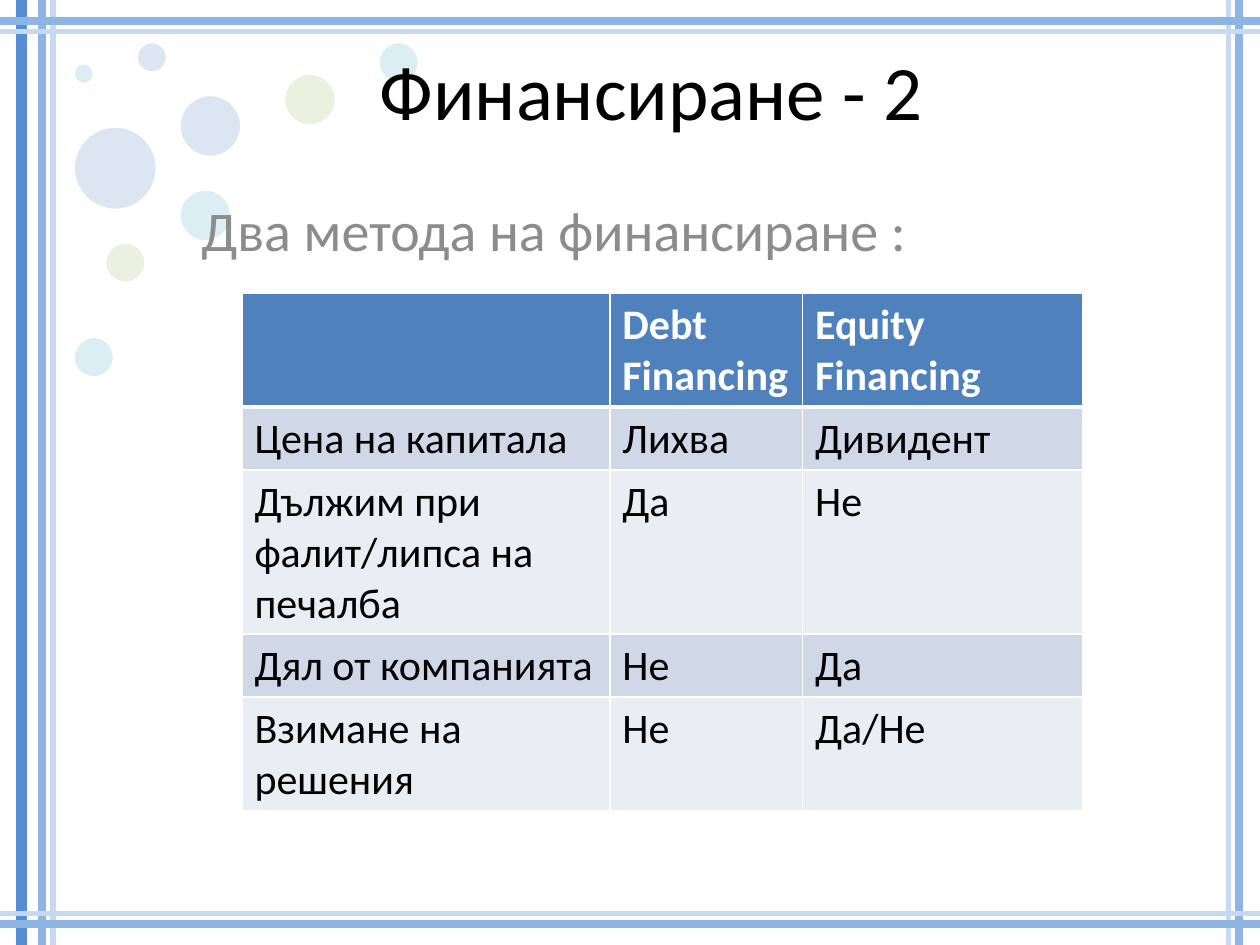
from lxml import etree
from pptx import Presentation
from pptx.dml.color import RGBColor
from pptx.enum.shapes import MSO_CONNECTOR, MSO_SHAPE
from pptx.enum.text import MSO_ANCHOR, PP_ALIGN
from pptx.oxml.ns import qn
from pptx.util import Inches, Pt

STRAIGHT = MSO_CONNECTOR.STRAIGHT
OVAL = MSO_SHAPE.OVAL
TOP, MIDDLE = MSO_ANCHOR.TOP, MSO_ANCHOR.MIDDLE
LEFT, CENTER = PP_ALIGN.LEFT, PP_ALIGN.CENTER

WIDTH, HEIGHT = 10, 7.5
FONT = "Calibri"
COLORS = {
    "strong": "558ED5", "medium": "8EB4E3", "light": "C6D9F1",
    "blue": "DCE6F2", "green": "EBF1DE", "aqua": "DBEEF4",
    "header": "4F81BD", "odd": "D0D8E8", "even": "E9EDF4",
    "white": "FFFFFF", "black": "000000", "gray": "8C8C8C",
}

VERTICAL_LINES = [
    (0.17, "strong", 6), (0.33, "medium", 4.5), (0.42, "light", 3),
    (9.83, "medium", 4.5), (9.75, "light", 3),
]
HORIZONTAL_LINES = [
    (0.17, "medium", 4.5), (0.25, "light", 3),
    (7.33, "medium", 4.5), (7.25, "light", 3),
]
BUBBLES = [
    (1.42, 0.75, 0.5, "blue"), (0.58, 1, 0.67, "blue"), (1.08, 0.33, 0.25, "blue"),
    (0.83, 1.92, 0.33, "green"), (2.25, 0.58, 0.42, "green"),
    (0.58, 2.67, 0.33, "aqua"), (0.58, 0.5, 0.17, "aqua"),
    (3, 0.33, 0.33, "aqua"), (1.42, 1.5, 0.42, "aqua"),
]
COLUMN_WIDTHS = [2.92, 1.53, 2.22]
ROW_HEIGHTS = [0.88, 0.49, 1.27, 0.49, 0.88]
FINANCING = [
    ["", "Debt Financing", "Equity Financing"],
    ["Цена на капитала", "Лихва", "Дивидент"],
    ["Дължим при фалит/липса на печалба", "Да", "Не"],
    ["Дял от компанията", "Не", "Да"],
    ["Взимане на решения", "Не", "Да/Не"],
]


def rgb(name):
    return RGBColor.from_string(COLORS[name])


def write_text(frame, text, size=24, color="black", bold=False, align=LEFT, anchor=TOP):
    frame.word_wrap = True
    frame.vertical_anchor = anchor
    paragraph = frame.paragraphs[0]
    paragraph.alignment = align
    paragraph.font.size = Pt(size)
    if text:
        run = paragraph.add_run()
        run.text = text
        run.font.name = FONT
        run.font.size = Pt(size)
        run.font.bold = bold
        run.font.color.rgb = rgb(color)


class SlideBuilder:
    def __init__(self, slide):
        self.slide = slide

    def line(self, x1, y1, x2, y2, color, weight):
        connector = self.slide.shapes.add_connector(
            STRAIGHT, Inches(x1), Inches(y1), Inches(x2), Inches(y2))
        connector.line.color.rgb = rgb(color)
        connector.line.width = Pt(weight)
        etree.SubElement(connector._element.spPr, qn("a:effectLst"))

    def bubble(self, left, top, size, color):
        shape = self.slide.shapes.add_shape(
            OVAL, Inches(left), Inches(top), Inches(size), Inches(size))
        shape.shadow.inherit = False
        shape.fill.solid()
        shape.fill.fore_color.rgb = rgb(color)
        shape.line.color.rgb = rgb("white")
        shape.line.width = Pt(2)

    def text(self, left, top, width, height, text, **text_format):
        box = self.slide.shapes.add_textbox(
            Inches(left), Inches(top), Inches(width), Inches(height))
        write_text(box.text_frame, text, **text_format)

    def border(self, cell, side, weight):
        line = etree.SubElement(
            cell._tc.get_or_add_tcPr(), qn(f"a:ln{side}"), w=str(Pt(weight)))
        fill = etree.SubElement(line, qn("a:solidFill"))
        etree.SubElement(fill, qn("a:srgbClr"), val=COLORS["white"])

    def table(self, left, top, rows, column_widths, row_heights):
        table = self.slide.shapes.add_table(
            len(rows), len(column_widths), Inches(left), Inches(top),
            Inches(sum(column_widths)), Inches(sum(row_heights))).table
        for column, width in zip(table.columns, column_widths):
            column.width = Inches(width)
        for index, (row, height, texts) in enumerate(zip(table.rows, row_heights, rows)):
            row.height = Inches(height)
            header = index == 0
            fill = "header" if header else "odd" if index % 2 else "even"
            weights = {"L": 1, "R": 1, "T": 3 if index == 1 else 1, "B": 3 if header else 1}
            for cell, text in zip(row.cells, texts):
                for side, weight in weights.items():
                    self.border(cell, side, weight)
                cell.fill.solid()
                cell.fill.fore_color.rgb = rgb(fill)
                write_text(cell.text_frame, text, bold=header,
                           color="white" if header else "black")


def main():
    presentation = Presentation()
    presentation.slide_width = Inches(WIDTH)
    presentation.slide_height = Inches(HEIGHT)
    builder = SlideBuilder(presentation.slides.add_slide(presentation.slide_layouts[6]))

    for x, color, weight in VERTICAL_LINES:
        builder.line(x, 0, x, HEIGHT, color, weight)
    for y, color, weight in HORIZONTAL_LINES:
        builder.line(0, y, WIDTH, y, color, weight)
    for bubble in BUBBLES:
        builder.bubble(*bubble)

    builder.text(0.92, 0, 8.5, 1.42, "Финансиране - 2", size=44, align=CENTER, anchor=MIDDLE)
    builder.text(1.5, 1.5, 7, 4.58, "Два метода на финансиране :", size=32, color="gray")
    builder.table(1.92, 2.33, FINANCING, COLUMN_WIDTHS, ROW_HEIGHTS)

    presentation.save("out.pptx")


if __name__ == "__main__":
    main()
